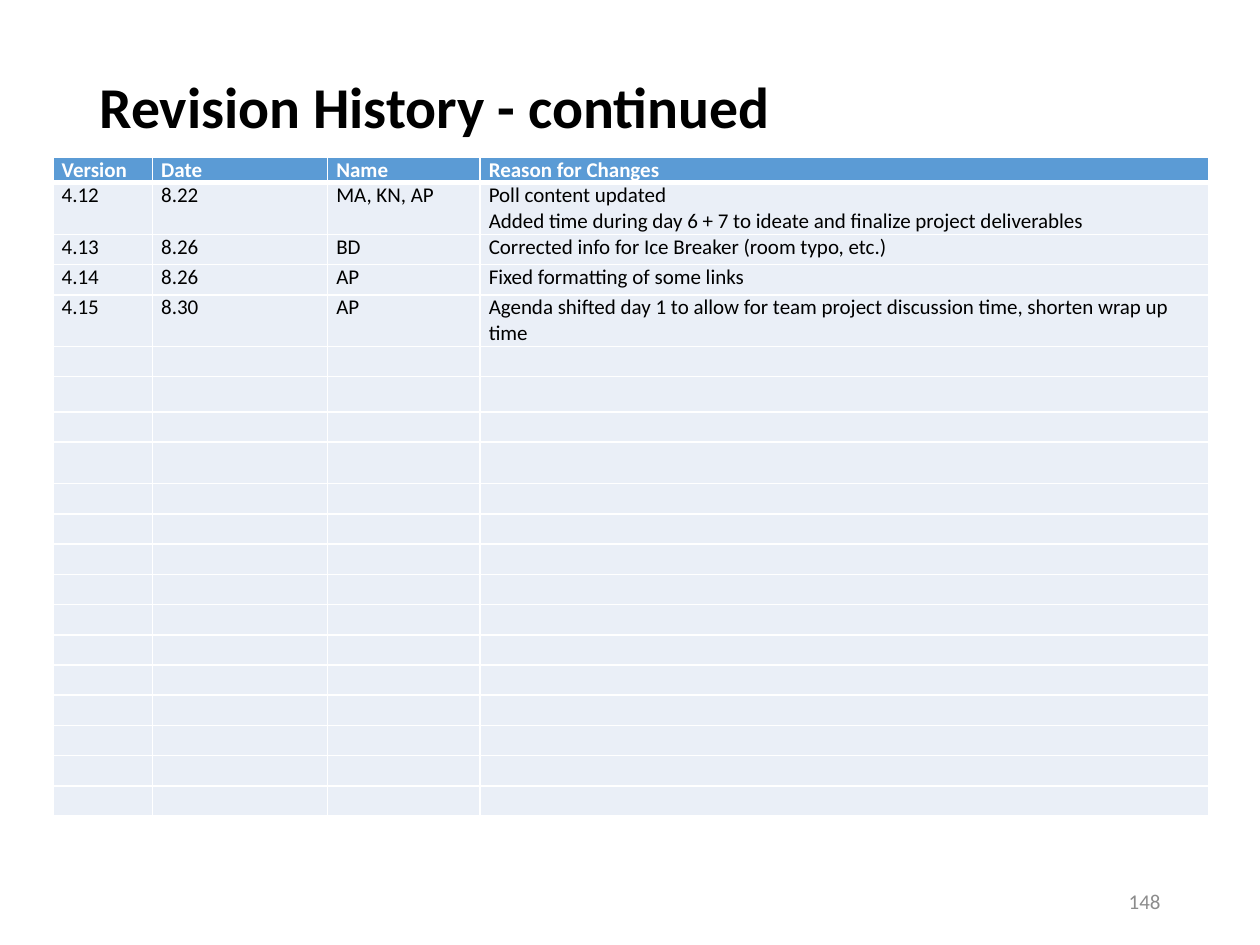
from lxml.etree import SubElement
from pptx import Presentation
from pptx.dml.color import RGBColor
from pptx.enum.text import MSO_ANCHOR, PP_ALIGN
from pptx.oxml.ns import qn
from pptx.util import Inches, Pt

TITLE = "Revision History - continued"
PAGE_NUMBER = "148"
HEADER = ("Version", "Date", "Name", "Reason for Changes")
REVISIONS = [
    ("4.12", "8.22", "MA, KN, AP",
     "Poll content updated\n"
     "Added time during day 6 + 7 to ideate and finalize project deliverables"),
    ("4.13", "8.26", "BD", "Corrected info for Ice Breaker (room typo, etc.)"),
    ("4.14", "8.26", "AP", "Fixed formatting of some links"),
    ("4.15", "8.30", "AP",
     "Agenda shifted day 1 to allow for team project discussion time, shorten wrap up time"),
]
ROW_COUNT = 20
COLUMN_WIDTHS = (0.79, 1.39, 1.21, 5.78)
ROW_HEIGHT = 0.24
SPECIAL_HEIGHTS = {0: 0.2, 1: 0.41, 4: 0.41, 6: 0.28, 8: 0.33}
TABLE_LEFT, TABLE_TOP = 0.42, 1.25

HEADER_STYLE = {"size": Pt(12), "bold": True, "name": "Calibri"}
BODY_STYLE = {**HEADER_STYLE, "bold": False}
TITLE_STYLE = {**HEADER_STYLE, "size": Pt(33)}


def color(hex_value):
    return RGBColor.from_string(hex_value)


def write(tf, text, style, hex_value):
    tf.text = text
    for p in tf.paragraphs:
        for r in p.runs:
            for name, value in style.items():
                setattr(r.font, name, value)
            r.font.color.rgb = color(hex_value)


def add_text(slide, box, text, style, hex_value):
    tf = slide.shapes.add_textbox(*map(Inches, box)).text_frame
    tf.word_wrap = True
    tf.vertical_anchor = MSO_ANCHOR.MIDDLE
    write(tf, text, style, hex_value)
    return tf


def add_borders(cell, widths):
    tc_pr = cell._tc.get_or_add_tcPr()
    for side, width in widths.items():
        line = SubElement(tc_pr, qn(f"a:ln{side}"), w=str(Pt(width)))
        fill = SubElement(line, qn("a:solidFill"))
        SubElement(fill, qn("a:srgbClr"), val="FFFFFF")


def format_cell(cell, row, text):
    cell.margin_left = cell.margin_right = Inches(0.07)
    cell.margin_top = cell.margin_bottom = 0
    add_borders(cell, {"L": 1, "R": 1, "T": 3 if row == 1 else 1, "B": 3 if row == 0 else 1})
    cell.fill.solid()
    cell.fill.fore_color.rgb = color("EAEFF7" if row else "5B9BD5")
    if text:
        write(cell.text_frame, text, BODY_STYLE if row else HEADER_STYLE,
              "000000" if row else "FFFFFF")
    else:  # keeps an empty row from growing to the default text size
        SubElement(cell.text_frame.paragraphs[0]._p, qn("a:endParaRPr"), sz="1200")


def add_revision_table(slide):
    heights = [SPECIAL_HEIGHTS.get(i, ROW_HEIGHT) for i in range(ROW_COUNT)]
    box = (TABLE_LEFT, TABLE_TOP, sum(COLUMN_WIDTHS), sum(heights))
    table = slide.shapes.add_table(ROW_COUNT, len(HEADER), *map(Inches, box)).table
    table.horz_banding = False
    for column, width in zip(table.columns, COLUMN_WIDTHS):
        column.width = Inches(width)
    filled = [HEADER, *REVISIONS]
    rows = filled + [("",) * len(HEADER)] * (ROW_COUNT - len(filled))
    for i, texts in enumerate(rows):
        table.rows[i].height = Inches(heights[i])
        for j, text in enumerate(texts):
            format_cell(table.cell(i, j), i, text)


def main():
    prs = Presentation()
    prs.slide_width, prs.slide_height = Inches(10), Inches(7.5)
    slide = prs.slides.add_slide(prs.slide_layouts[6])

    title = add_text(slide, (0.69, 0.4, 8.62, 1.45), TITLE, TITLE_STYLE, "000000")
    title.margin_bottom = Inches(0.55)
    title.paragraphs[0].line_spacing = 0.9

    add_revision_table(slide)

    number = add_text(slide, (7.06, 6.95, 2.25, 0.4), PAGE_NUMBER, BODY_STYLE, "8C8C8C")
    number.paragraphs[0].alignment = PP_ALIGN.RIGHT

    prs.save("out.pptx")


if __name__ == "__main__":
    main()
